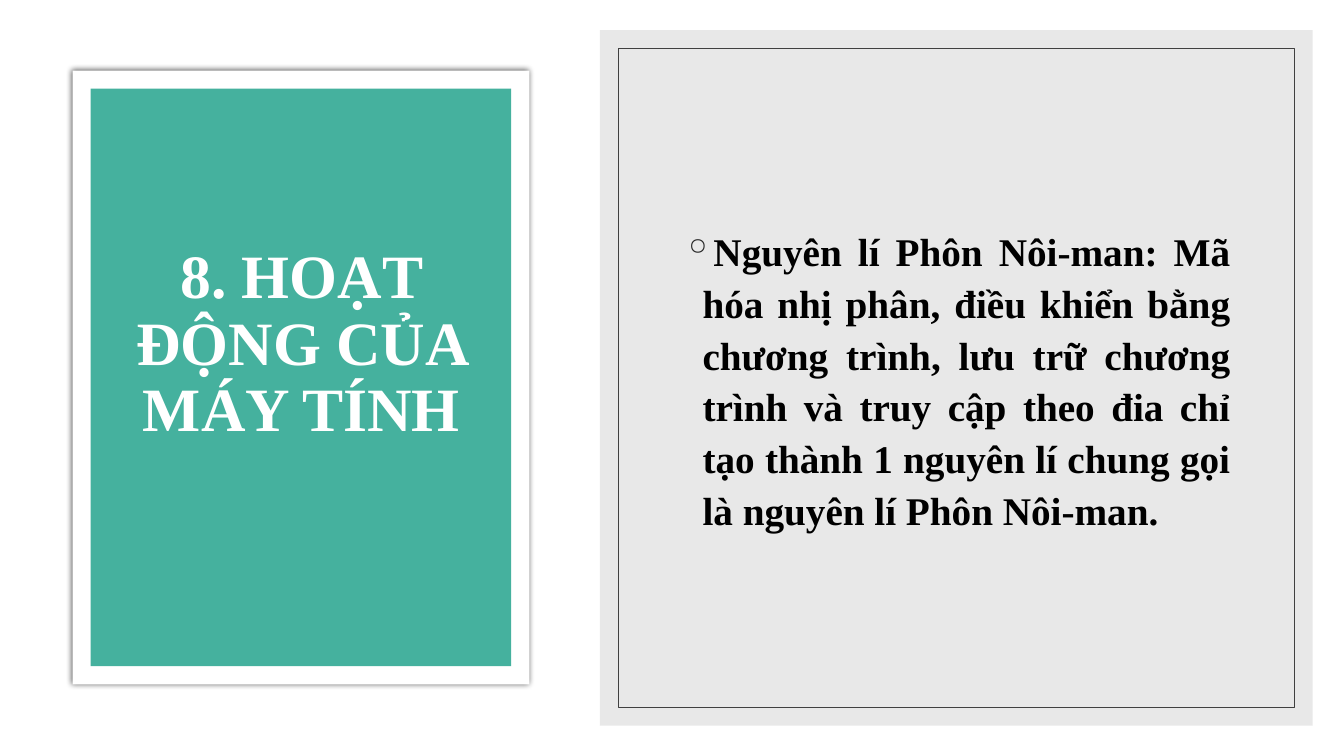
from lxml import etree
from pptx import Presentation
from pptx.dml.color import RGBColor
from pptx.enum.shapes import MSO_SHAPE
from pptx.enum.text import MSO_ANCHOR, MSO_AUTO_SIZE, PP_ALIGN
from pptx.oxml.ns import qn
from pptx.util import Inches, Pt

RECT = MSO_SHAPE.RECTANGLE
MIDDLE = MSO_ANCHOR.MIDDLE
FIXED = MSO_AUTO_SIZE.NONE
CENTER, JUSTIFY = PP_ALIGN.CENTER, PP_ALIGN.JUSTIFY

FONT = "Times New Roman"
COLORS = {
    "white": "FFFFFF", "teal": "45B19E", "gray": "D9D9D9",
    "line": "404040", "bullet": "262626", "black": "000000",
}
CARD = (0.72, 0.7, 4.53, 6.09)
PANEL = (5.95, 0.3, 7.07, 6.9)
INSET = 0.18

TITLE = "8. HOẠT ĐỘNG CỦA MÁY TÍNH"
BODY = (
    "Nguyên lí Phôn Nôi-man: Mã hóa nhị phân, điều khiển bằng chương trình, "
    "lưu trữ chương trình và truy cập theo đia chỉ tạo thành 1 nguyên lí "
    "chung gọi là nguyên lí Phôn Nôi-man."
)


def rgb(name):
    return RGBColor.from_string(COLORS[name])


def shrink(box, gap):
    x, y, w, h = box
    return x + gap, y + gap, w - 2 * gap, h - 2 * gap


def add_rect(slide, box, fill=None, line=None):
    shape = slide.shapes.add_shape(RECT, *map(Inches, box))
    shape.shadow.inherit = False
    if fill:
        shape.fill.solid()
        shape.fill.fore_color.rgb = rgb(fill)
    else:
        shape.fill.background()
    if line:
        shape.line.color.rgb = rgb(line)
        shape.line.width = Pt(0.5)
    else:
        shape.line.fill.background()
    return shape


def add_alpha(color, share):
    alpha = etree.SubElement(color, qn("a:alpha"))
    alpha.set("val", str(share * 1000))


def add_glow(shape, blur, share):
    """Give the shape a soft, centred black shadow."""
    effects = shape._element.spPr.find(qn("a:effectLst"))
    shadow = etree.SubElement(effects, qn("a:outerShdw"))
    shadow.set("blurRad", str(Pt(blur)))
    shadow.set("algn", "ctr")
    color = etree.SubElement(shadow, qn("a:srgbClr"), val=COLORS["black"])
    add_alpha(color, share)


def set_text(shape, text, size, color, align, space):
    frame = shape.text_frame
    frame.text = text
    frame.word_wrap = True
    frame.auto_size = FIXED
    frame.vertical_anchor = MIDDLE
    para = frame.paragraphs[0]
    para.alignment = align
    para.line_spacing = space
    font = para.font
    font.name, font.size, font.bold = FONT, Pt(size), True
    font.color.rgb = rgb(color)
    return para


def add_bullet(para, char, color, indent):
    props = para._p.get_or_add_pPr()
    props.set("marL", str(Inches(indent)))
    props.set("indent", str(-Inches(indent)))
    tint = etree.Element(qn("a:buClr"))
    etree.SubElement(tint, qn("a:srgbClr"), val=COLORS[color])
    mark = etree.Element(qn("a:buChar"), char=char)
    font = props.find(qn("a:defRPr"))
    for item in (tint, mark):
        if font is None:
            props.append(item)
        else:
            font.addprevious(item)


def add_title(slide):
    title = slide.shapes.title
    title.left, title.top, title.width, title.height = map(
        Inches, (1.08, 1.3, 3.82, 4.91))
    set_text(title, TITLE, 44, "white", CENTER, 0.9)
    title.text_frame.margin_bottom = Inches(0.71)


def add_body(slide):
    box = slide.shapes.add_textbox(*map(Inches, shrink(PANEL, 4 * INSET)))
    para = set_text(box, BODY, 28, "black", JUSTIFY, 1.1)
    para.space_before = Pt(9)
    add_bullet(para, "◦", "bullet", 0.2)


def main():
    deck = Presentation()
    deck.slide_width, deck.slide_height = Inches(13.33), Inches(7.5)
    slide = deck.slides.add_slide(deck.slide_layouts[5])

    card = add_rect(slide, CARD, "white")
    add_glow(card, 4, 66)
    add_rect(slide, shrink(CARD, INSET), "teal")

    panel = add_rect(slide, PANEL, "gray")
    add_alpha(panel._element.spPr.find(".//" + qn("a:srgbClr")), 60)
    add_rect(slide, shrink(PANEL, INSET), line="line")

    add_title(slide)
    # The title must lie above the card.
    slide.shapes._spTree.append(slide.shapes.title._element)
    add_body(slide)
    deck.save("out.pptx")


if __name__ == "__main__":
    main()
